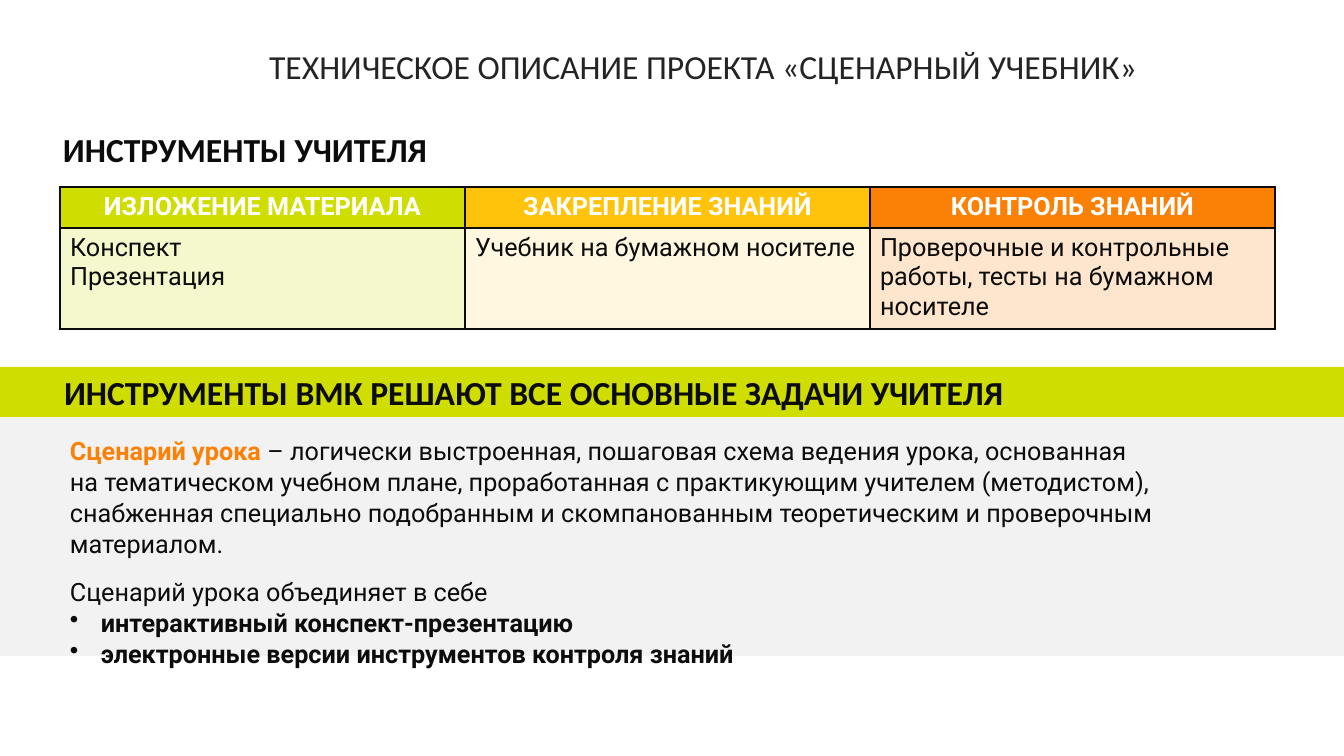
import dataclasses

import lxml.etree
import pptx
import pptx.dml.color
import pptx.enum.shapes
import pptx.enum.text
import pptx.oxml.ns
import pptx.util

ALIGN = pptx.enum.text.PP_ALIGN
ANCHOR = pptx.enum.text.MSO_ANCHOR
AUTO_SIZE = pptx.enum.text.MSO_AUTO_SIZE
EMU_PER_PX = 914400 / 100.8


@dataclasses.dataclass(frozen=True)
class Theme:
    heading_font: str = "Calibri"
    body_font: str = "Roboto"
    heading_size: int = 24
    body_size: int = 18
    title: str = "242424"
    ink: str = "0C0C0C"
    white: str = "FFFFFF"
    panel: str = "F2F2F2"
    lime: str = "CFDE00"
    amber: str = "FFC30C"
    cream: str = "FFF7E0"
    orange: str = "FA8006"


def px(value):
    return pptx.util.Emu(round(value * EMU_PER_PX))


def rgb(value):
    return pptx.dml.color.RGBColor.from_string(value)


def add_element(parent, tag, **attributes):
    return lxml.etree.SubElement(parent, pptx.oxml.ns.qn(tag), attributes)


def apply_format(target, values):
    for name, value in values.items():
        setattr(target, name, value)


class SlideBuilder:
    def __init__(self, slide, theme):
        self.slide = slide
        self.theme = theme
        self.heading = {"name": theme.heading_font, "size": pptx.util.Pt(theme.heading_size)}
        self.body = {"name": theme.body_font, "size": pptx.util.Pt(theme.body_size)}

    def add_runs(self, paragraph, runs, style, paragraph_format=None, bullet=False):
        if bullet:
            properties = paragraph._p.get_or_add_pPr()
            properties.set("marL", str(px(31)))
            properties.set("indent", str(-px(31)))
            add_element(properties, "a:buChar", char="•")
        apply_format(paragraph, paragraph_format or {})
        for text, color, bold in runs:
            run = paragraph.add_run()
            run.text = text
            apply_format(run.font, style | {"bold": bold})
            run.font.color.rgb = rgb(color)

    def title(self, text, box):
        shape = self.slide.shapes.title
        apply_format(shape, dict(zip(("left", "top", "width", "height"), map(px, box))))
        frame = shape.text_frame
        apply_format(frame, {"auto_size": AUTO_SIZE.NONE, "vertical_anchor": ANCHOR.MIDDLE, "word_wrap": True})
        self.add_runs(frame.paragraphs[0], [(text, self.theme.title, False)], self.heading,
                      {"alignment": ALIGN.LEFT, "line_spacing": 0.9})

    def text(self, paragraphs, box, style):
        frame = self.slide.shapes.add_textbox(*map(px, box)).text_frame
        apply_format(frame, {"word_wrap": True, "auto_size": AUTO_SIZE.SHAPE_TO_FIT_TEXT})
        for index, options in enumerate(paragraphs):
            paragraph = frame.add_paragraph() if index else frame.paragraphs[0]
            self.add_runs(paragraph, style=style, **options)

    def band(self, box, color, text=None):
        shape = self.slide.shapes.add_shape(pptx.enum.shapes.MSO_SHAPE.RECTANGLE, *map(px, box))
        shape.shadow.inherit = False
        shape.fill.solid()
        shape.fill.fore_color.rgb = rgb(color)
        shape.line.fill.background()
        if text:
            frame = shape.text_frame
            apply_format(frame, {"margin_left": px(64), "vertical_anchor": ANCHOR.MIDDLE, "word_wrap": True})
            self.add_runs(frame.paragraphs[0], [(text, self.theme.ink, True)], self.heading,
                          {"alignment": ALIGN.LEFT})

    def cell(self, cell, lines, fill, opacity, text_color, bold, alignment):
        properties = cell._tc.get_or_add_tcPr()
        for side in ("a:lnL", "a:lnR", "a:lnT", "a:lnB"):
            border = add_element(properties, side, w=str(pptx.util.Pt(1)))
            add_element(add_element(border, "a:solidFill"), "a:srgbClr", val=self.theme.ink)
        cell.fill.solid()
        cell.fill.fore_color.rgb = rgb(fill)
        if opacity < 100:
            color = properties.find(pptx.oxml.ns.qn("a:solidFill"))[0]
            add_element(color, "a:alpha", val=str(opacity * 1000))
        frame = cell.text_frame
        for index, line in enumerate(lines):
            paragraph = frame.add_paragraph() if index else frame.paragraphs[0]
            self.add_runs(paragraph, [(line, text_color, bold)], self.body, {"alignment": alignment})

    def table(self, columns, box, row_heights):
        table = self.slide.shapes.add_table(2, len(columns), *map(px, box)).table
        apply_format(table, {"horz_banding": False, "first_row": False})
        for row, height in zip(table.rows, row_heights):
            row.height = px(height)
        for index, (header, color, lines, fill, opacity) in enumerate(columns):
            table.columns[index].width = px(box[2] // len(columns))
            self.cell(table.cell(0, index), [header], color, 100, self.theme.white, True, ALIGN.CENTER)
            self.cell(table.cell(1, index), lines, fill, opacity, self.theme.ink, False, ALIGN.LEFT)


def main():
    theme = Theme()
    presentation = pptx.Presentation()
    apply_format(presentation, {"slide_width": px(1344), "slide_height": px(756)})
    slide = presentation.slides.add_slide(presentation.slide_layouts[5])
    builder = SlideBuilder(slide, theme)

    builder.band((0, 378, 1344, 278), theme.panel)
    builder.title("ТЕХНИЧЕСКОЕ ОПИСАНИЕ ПРОЕКТА «СЦЕНАРНЫЙ УЧЕБНИК»", (259, 36, 913, 65))
    builder.text([{"runs": [("ИНСТРУМЕНТЫ УЧИТЕЛЯ", theme.ink, True)]}], (53, 124, 1119, 50), builder.heading)
    builder.table([
        ("ИЗЛОЖЕНИЕ МАТЕРИАЛА", theme.lime, ["Конспект", "Презентация"], theme.lime, 20),
        ("ЗАКРЕПЛЕНИЕ ЗНАНИЙ", theme.amber, ["Учебник на бумажном носителе"], theme.cream, 100),
        ("КОНТРОЛЬ ЗНАНИЙ", theme.orange,
         ["Проверочные и контрольные работы, тесты на бумажном носителе"], theme.orange, 20),
    ], (60, 187, 1215, 142), (41, 101))
    builder.band((0, 367, 1344, 50), theme.lime, "ИНСТРУМЕНТЫ ВМК РЕШАЮТ ВСЕ ОСНОВНЫЕ ЗАДАЧИ УЧИТЕЛЯ")

    spacing = {"line_spacing": 1.03}
    plain_lines = [
        ("на тематическом учебном плане, проработанная с практикующим учителем (методистом),", 0),
        ("снабженная специально подобранным и скомпанованным теоретическим и проверочным материалом.", 12),
        ("Сценарий урока объединяет в себе", 0),
    ]
    tools = ["интерактивный конспект-презентацию", "электронные версии инструментов контроля знаний"]
    definition = [
        ("Сценарий урока ", theme.orange, True),
        ("– логически выстроенная, пошаговая схема ведения урока, основанная", theme.ink, False),
    ]
    builder.text(
        [{"runs": definition, "paragraph_format": spacing}]
        + [{"runs": [(line, theme.ink, False)],
            "paragraph_format": spacing | {"space_after": pptx.util.Pt(after)}} for line, after in plain_lines]
        + [{"runs": [(tool, theme.ink, True)], "paragraph_format": spacing, "bullet": True} for tool in tools],
        (60, 429, 1238, 211), builder.body)

    presentation.save("out.pptx")


if __name__ == "__main__":
    main()
